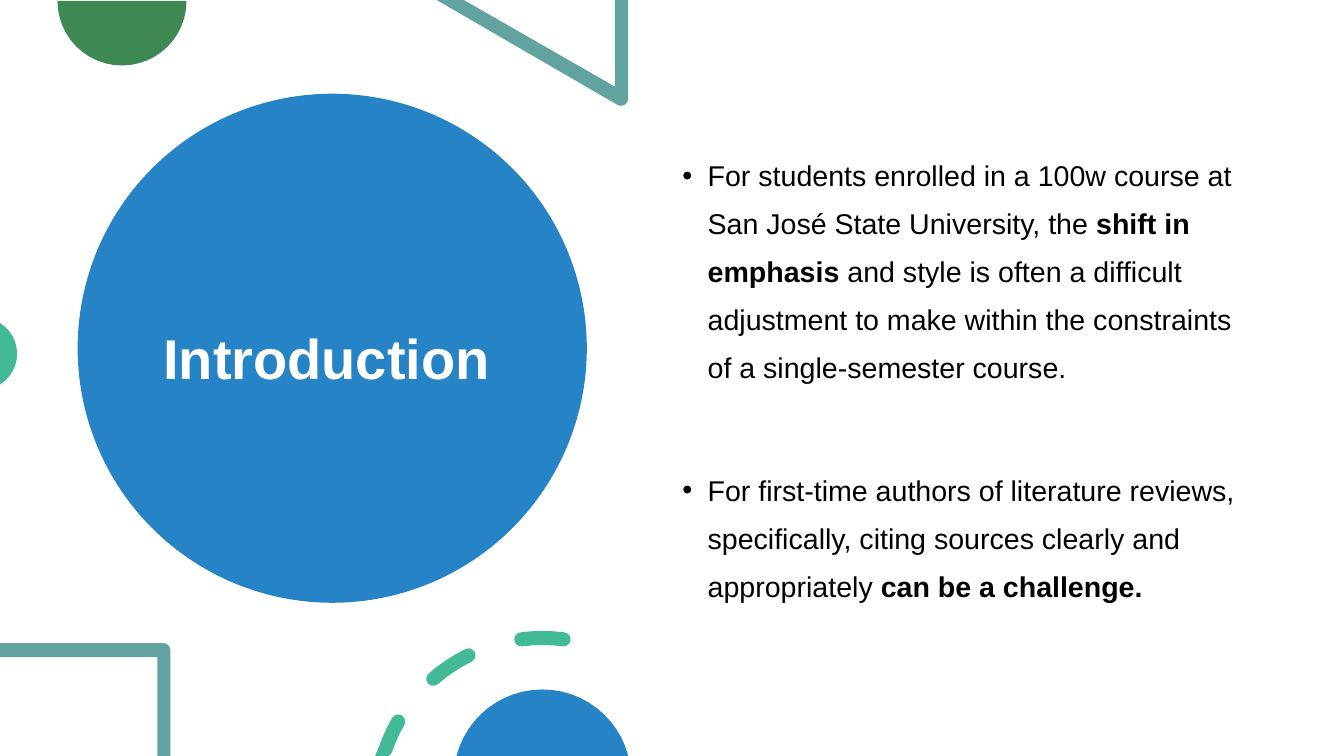
from math import cos, radians, sin

from lxml.etree import SubElement
from pptx import Presentation
from pptx.dml.color import RGBColor
from pptx.enum.shapes import MSO_SHAPE
from pptx.enum.text import MSO_ANCHOR, MSO_AUTO_SIZE, PP_ALIGN
from pptx.oxml.ns import qn
from pptx.util import Inches, Pt

# Slide grid: one column or row is one inch
COLUMNS, ROWS = 13.33, 7.5
FONT = "Arial"
WHITE = RGBColor(0xFF, 0xFF, 0xFF)
BLACK = RGBColor(0x00, 0x00, 0x00)
BLUE = RGBColor(0x26, 0x83, 0xC6)
GREEN = RGBColor(0x3E, 0x88, 0x53)
TEAL = RGBColor(0x62, 0xA3, 0x9F)
MINT = RGBColor(0x42, 0xBA, 0x97)

# Each bullet is a list of (text, bold) spans
BULLETS = [
    [("For students enrolled in a 100w course at San José State University, the ", False),
     ("shift in emphasis ", True),
     ("and style is often a difficult adjustment to make within the constraints "
      "of a single-semester course.", False)],
    [("For first-time authors of literature reviews, specifically, citing sources "
      "clearly and appropriately ", False),
     ("can be a challenge.", True)],
]


def place(shape, left, top, width, height):
    shape.left, shape.top = Inches(left), Inches(top)
    shape.width, shape.height = Inches(width), Inches(height)


def paint(shape, color):
    shape.shadow.inherit = False
    shape.fill.solid()
    shape.fill.fore_color.rgb = color
    shape.line.fill.background()


def style_span(span, size, color, bold):
    span.font.name = FONT
    span.font.size = Pt(size)
    span.font.bold = bold
    span.font.color.rgb = color


def polar(x, y, radius, degrees):
    """Point on a circle; angles run counterclockwise from the right."""
    return x + radius * cos(radians(degrees)), y - radius * sin(radians(degrees))


def arc(x, y, radius, start, end, steps):
    return [polar(x, y, radius, start + (end - start) * i / steps)
            for i in range(steps + 1)]


def add_outline(slide, contours, color):
    """Draw one filled freeform from closed contours, kept within the slide."""
    scaled = [[(Inches(min(max(x, 0), COLUMNS)), Inches(min(max(y, 0), ROWS)))
               for x, y in contour] for contour in contours]
    builder = slide.shapes.build_freeform(*scaled[0][0])
    for contour in scaled:
        if contour is not scaled[0]:
            builder.move_to(*contour[0])
        builder.add_line_segments(contour[1:], close=True)
    paint(builder.convert_to_shape(), color)


def round_dash(x, y, radius, start, sweep, thickness):
    """Contour of a thick arc with round ends."""
    half, end = thickness / 2, start + sweep
    return (arc(x, y, radius + half, start, end, 4)
            + arc(*polar(x, y, radius, end), half, end, end + 180, 6)[1:-1]
            + arc(x, y, radius - half, end, start, 4)
            + arc(*polar(x, y, radius, start), half, start + 180, start + 360, 6)[1:-1])


def add_title(slide):
    title = slide.shapes.title
    place(title, 1.52, 1.35, 3.54, 4.45)
    frame = title.text_frame
    frame.text = "Introduction"
    frame.word_wrap = True
    frame.auto_size = MSO_AUTO_SIZE.NONE
    frame.vertical_anchor = MSO_ANCHOR.MIDDLE
    frame.margin_top = Inches(0.07)
    para = frame.paragraphs[0]
    para.alignment = PP_ALIGN.LEFT
    para.line_spacing = 0.9
    style_span(para.runs[0], 40, WHITE, True)

    # The blue disc sits behind the title
    disc = slide.shapes.add_shape(
        MSO_SHAPE.OVAL, Inches(0.77), Inches(0.93), Inches(5.05), Inches(5.05))
    paint(disc, BLUE)
    title._element.addprevious(disc._element)


def set_bullet(para):
    properties = para._p.get_or_add_pPr()
    properties.set("marL", str(Inches(0.25)))
    properties.set("indent", str(-Inches(0.25)))
    SubElement(properties, qn("a:buFont")).set("typeface", FONT)
    SubElement(properties, qn("a:buChar")).set("char", "•")


def add_bullets(slide):
    box = slide.shapes.add_textbox(0, 0, 0, 0)
    place(box, 6.67, 0.9, 5.75, 5.35)
    frame = box.text_frame
    frame.word_wrap = True
    frame.vertical_anchor = MSO_ANCHOR.BOTTOM
    frame.margin_bottom = Inches(0.27)
    for index, spans in enumerate(BULLETS):
        para = frame.add_paragraph() if index else frame.paragraphs[0]
        para.line_spacing = 1.4
        para.space_before = Pt(53 if index else 10)
        set_bullet(para)
        for text, bold in spans:
            span = para.add_run()
            span.text = text
            style_span(span, 20.4, BLACK, bold)


def add_decorations(slide):
    # Circles cut by the slide edges
    add_outline(slide, [arc(1.21, 0.01, 0.64, 180, 360, 24)], GREEN)
    add_outline(slide, [arc(-0.19, 3.51, 0.36, -58, 58, 12)], MINT)
    add_outline(slide, [arc(5.38, 7.72, 0.88, 14.5, 165.5, 24)], BLUE)

    # Triangle and square frames, each with one rounded corner
    triangle = [(6.23, 0), *arc(6.16, 0.98, 0.07, 0, -120, 5),
                (4.33, 0), (4.6, 0), (6.1, 0.86), (6.1, 0)]
    square = [(0, 6.38), *arc(1.62, 6.45, 0.07, 90, 0, 4),
              (1.69, ROWS), (1.56, ROWS), (1.56, 6.52), (0, 6.52)]
    for contour in (triangle, square):
        add_outline(slide, [contour], TEAL)

    # Dashed ring around the lower circle
    dashes = [round_dash(5.38, 7.98, 1.65, 82.7 + 33.7 * i, 14.6, 0.14) for i in range(3)]
    add_outline(slide, dashes, MINT)


def main():
    deck = Presentation()
    deck.slide_width, deck.slide_height = Inches(COLUMNS), Inches(ROWS)
    page = deck.slides.add_slide(deck.slide_layouts[5])
    page.background.fill.solid()
    page.background.fill.fore_color.rgb = WHITE
    add_title(page)
    add_decorations(page)
    add_bullets(page)
    deck.save("out.pptx")


if __name__ == "__main__":
    main()
